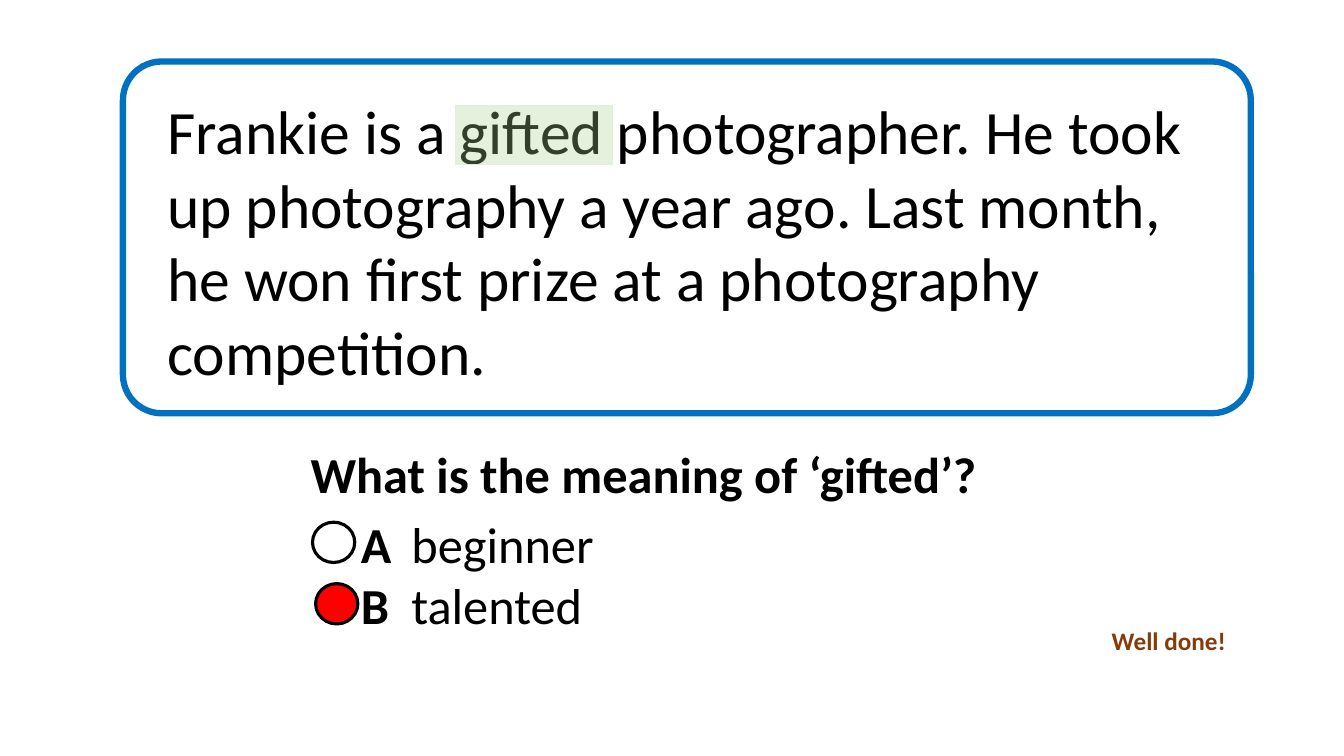
from lxml import etree
from pptx import Presentation
from pptx.dml.color import RGBColor
from pptx.enum import shapes, text
from pptx.oxml import ns
from pptx.util import Pt

COLORS = {
    "black": "000000", "white": "FFFFFF", "red": "FF0000", "blue": "0070C0",
    "brown": "843C0B", "green": "A9D18E", "pale_green": "E2F0D9",
}
TABS = (44.6, 80.6)


class QuizSlide:
    def __init__(self, s, font="Calibri"):
        self.s = s
        self.font = font

    def rgb(self, name):
        return RGBColor.from_string(COLORS[name])

    def shape(self, kind, box, line, width, fill=None, alpha=None):
        """Add a preset shape; alpha is the opacity of the fill in percent."""
        sp = self.s.shapes.add_shape(kind, *map(Pt, box))
        sp.shadow.inherit = False
        sp.line.color.rgb = self.rgb(line)
        sp.line.width = Pt(width)
        if fill is None:
            sp.fill.background()
            return sp
        sp.fill.solid()
        sp.fill.fore_color.rgb = self.rgb(fill)
        if alpha is not None:
            clr = sp._element.spPr.find(ns.qn("a:solidFill")).find(ns.qn("a:srgbClr"))
            etree.SubElement(clr, ns.qn("a:alpha"), val=str(alpha * 1000))
        return sp

    def textbox(self, box, lines, size, color="black"):
        self.add_text(self.s.shapes.add_textbox(*map(Pt, box)), lines, size, color)

    def placeholder(self, sp, box, lines, size, tabs=()):
        sp.left, sp.top, sp.width, sp.height = map(Pt, box)
        self.add_text(sp, lines, size, "black", tabs)

    def add_text(self, sp, lines, size, color, tabs=()):
        """Fill a shape with lines, each a list of (text, bold) runs."""
        tf = sp.text_frame
        tf.word_wrap = True
        tf.auto_size = text.MSO_AUTO_SIZE.NONE
        tf.vertical_anchor = text.MSO_ANCHOR.TOP
        for i, runs in enumerate(lines):
            p = tf.add_paragraph() if i else tf.paragraphs[0]
            p.alignment = text.PP_ALIGN.LEFT
            p.space_before = Pt(0)
            self.plain_list(p, tabs)
            for content, bold in runs:
                r = p.add_run()
                r.text = content
                r.font.name = self.font
                r.font.size = Pt(size)
                r.font.bold = bold
                r.font.color.rgb = self.rgb(color)

    def plain_list(self, p, tabs):
        """Remove bullet and indent, then set left tab stops."""
        pPr = p._p.get_or_add_pPr()
        pPr.set("marL", "0")
        pPr.set("indent", "0")
        etree.SubElement(pPr, ns.qn("a:buNone"))
        if tabs:
            tab_list = etree.SubElement(pPr, ns.qn("a:tabLst"))
            for pos in tabs:
                etree.SubElement(tab_list, ns.qn("a:tab"), pos=str(Pt(pos)), algn="l")


def main():
    prs = Presentation()
    prs.slide_width, prs.slide_height = Pt(960), Pt(540)
    s = prs.slides.add_slide(prs.slide_layouts[1])
    quiz = QuizSlide(s)
    kind = shapes.MSO_SHAPE

    panel = quiz.shape(kind.ROUNDED_RECTANGLE, (87.8, 43.9, 805.7, 251.3), "blue", 4.5)
    panel.adjustments[0] = 0.11
    passage = ("Frankie is a gifted photographer. He took up photography a year ago. "
               "Last month, he won first prize at a photography competition.")
    quiz.textbox((112.3, 62.6, 759.6, 220.3), [[(passage, False)]], 44)

    quiz.placeholder(s.shapes.title, (214.6, 313.2, 531.4, 51),
                     [[("What is the meaning of ‘gifted’?", True)]], 36)
    options = {"A": "beginner", "B": "talented"}
    quiz.placeholder(s.placeholders[1], (214.6, 363, 531.4, 95),
                     [[("\t", False), (letter, True), ("\t" + word, False)]
                      for letter, word in options.items()], 36, TABS)

    for left, top, fill in ((223.2, 373, "white"), (225.4, 416.9, "red")):
        quiz.shape(kind.OVAL, (left, top, 30.2, 28.8), "black", 2.25, fill)

    quiz.textbox((787, 442.8, 123.1, 28.8), [[("Well done!", True)]], 18, "brown")
    quiz.shape(kind.RECTANGLE, (325.4, 75.6, 112.3, 41.8), "pale_green", 1, "green", 30)

    prs.save("out.pptx")


if __name__ == "__main__":
    main()
